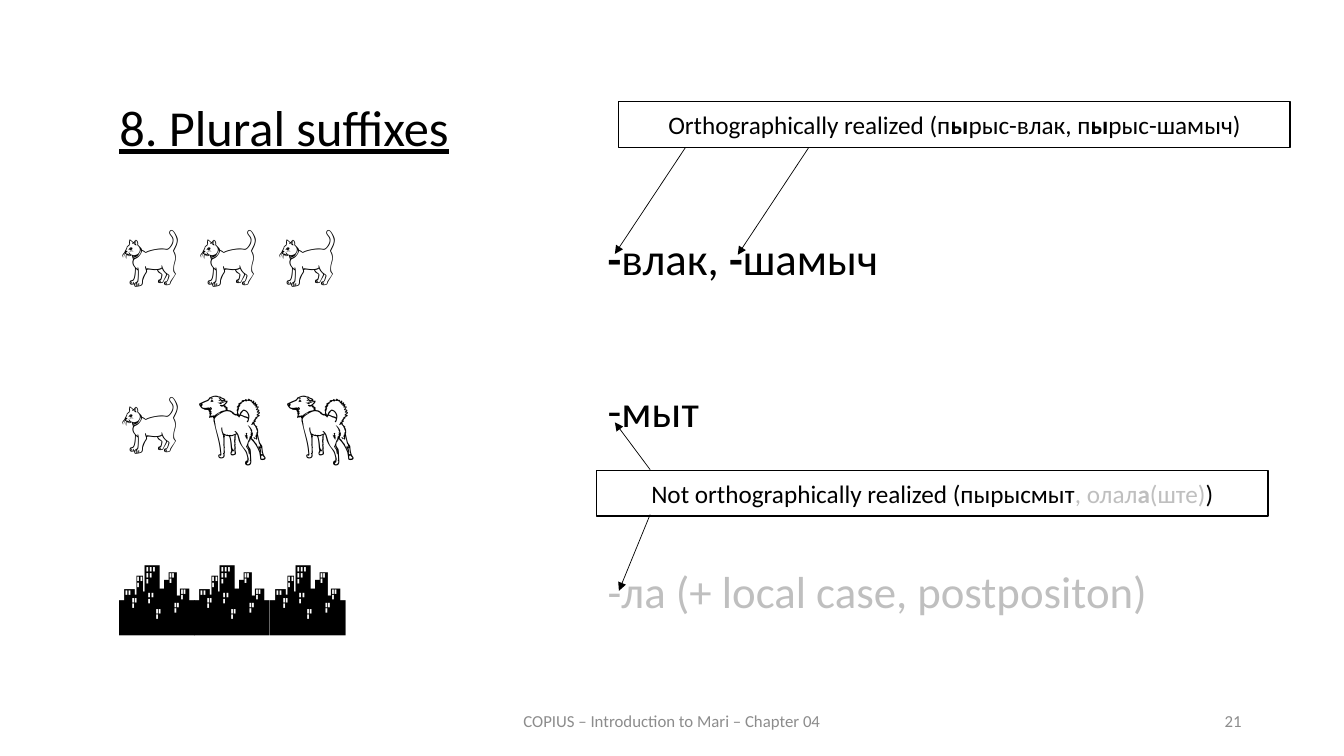
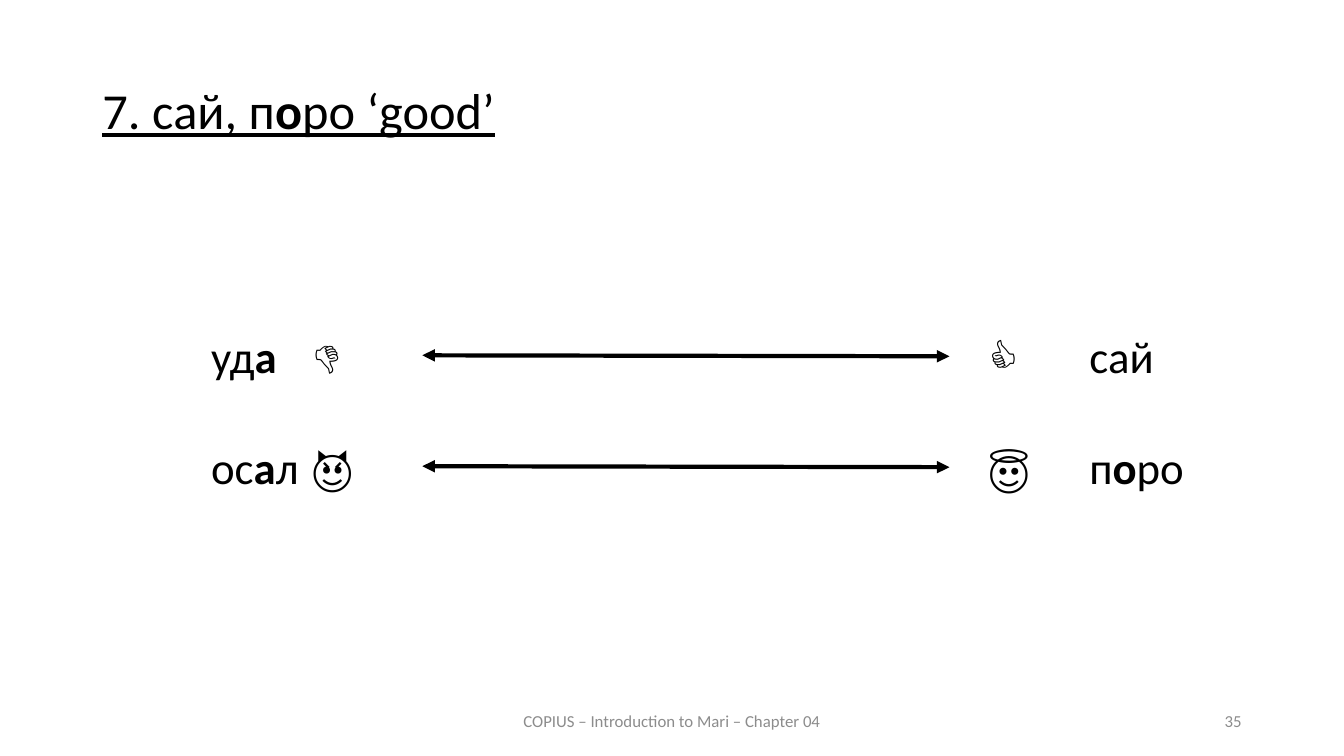
from typing import NamedTuple

from lxml import etree
from pptx import Presentation
from pptx.dml.color import RGBColor
from pptx.enum.shapes import MSO_CONNECTOR, MSO_SHAPE
from pptx.enum.text import MSO_ANCHOR, MSO_AUTO_SIZE, PP_ALIGN
from pptx.oxml.ns import qn
from pptx.shapes.base import BaseShape
from pptx.slide import Slide
from pptx.util import Pt

LEFT, CENTER, RIGHT = PP_ALIGN.LEFT, PP_ALIGN.CENTER, PP_ALIGN.RIGHT
TOP, MIDDLE = MSO_ANCHOR.TOP, MSO_ANCHOR.MIDDLE
FIXED, GROW = MSO_AUTO_SIZE.NONE, MSO_AUTO_SIZE.SHAPE_TO_FIT_TEXT
RECT, STRAIGHT = MSO_SHAPE.RECTANGLE, MSO_CONNECTOR.STRAIGHT

BLACK = RGBColor(0x00, 0x00, 0x00)
WHITE = RGBColor(0xFF, 0xFF, 0xFF)
PALE = RGBColor(0xBF, 0xBF, 0xBF)
GRAY = RGBColor(0x8C, 0x8C, 0x8C)
FACE = "Calibri"
FOOTER = "COPIUS – Introduction to Mari – Chapter 04"
TITLE_SIZE, ICON_SIZE, WORD_SIZE, NOTE_SIZE, FOOT_SIZE = 36, 54, 32, 18, 12
TAB = 72


class Box(NamedTuple):
    left: float
    top: float
    width: float
    height: float


class Bit(NamedTuple):
    text: str
    bold: bool = False
    color: RGBColor | None = None


class Label(NamedTuple):
    box: Box
    bits: list[Bit]
    size: float = WORD_SIZE
    color: RGBColor = BLACK


class Arrow(NamedTuple):
    start: tuple[float, float]
    end: tuple[float, float]
    width: float = 0.5
    double: bool = False


def mark(text: str) -> list[Bit]:
    """Split text at asterisks; every second piece is bold."""
    return [Bit(piece, i % 2 == 1)
            for i, piece in enumerate(text.split("*")) if piece]


def write(shape: BaseShape, bits: list[Bit], size: float,
          color: RGBColor = BLACK, align: PP_ALIGN = LEFT,
          anchor: MSO_ANCHOR = TOP, fit: MSO_AUTO_SIZE = FIXED) -> None:
    frame = shape.text_frame
    frame.word_wrap = True
    frame.auto_size = fit
    frame.vertical_anchor = anchor
    para = frame.paragraphs[0]
    para.alignment = align
    if any("\t" in bit.text for bit in bits):
        tabs = etree.SubElement(para._p.get_or_add_pPr(), qn("a:tabLst"))
        etree.SubElement(tabs, qn("a:tab"), pos=str(Pt(TAB)), algn="l")
    font = para.font
    font.name, font.size, font.color.rgb = FACE, Pt(size), color
    for bit in bits:
        run = para.add_run()
        run.text = bit.text
        if bit.bold:
            run.font.bold = True
        if bit.color is not None:
            run.font.color.rgb = bit.color


def add_text(slide: Slide, box: Box) -> BaseShape:
    return slide.shapes.add_textbox(*map(Pt, box))


def add_label(slide: Slide, label: Label) -> None:
    write(add_text(slide, label.box), label.bits, label.size,
          label.color, fit=GROW)


def add_note(slide: Slide, box: Box, bits: list[Bit]) -> None:
    note = slide.shapes.add_shape(RECT, *map(Pt, box))
    note.shadow.inherit = False
    note.fill.solid()
    note.fill.fore_color.rgb = WHITE
    note.line.color.rgb = BLACK
    note.line.width = Pt(1)
    write(note, bits, NOTE_SIZE, align=CENTER, anchor=MIDDLE)


def add_arrow(slide: Slide, arrow: Arrow) -> None:
    line = slide.shapes.add_connector(
        STRAIGHT, *map(Pt, arrow.start + arrow.end))
    line.line.color.rgb = BLACK
    line.line.width = Pt(arrow.width)
    props = line._element.spPr
    stroke = props.find(qn("a:ln"))
    if arrow.double:
        etree.SubElement(stroke, qn("a:headEnd"), type="triangle")
    etree.SubElement(stroke, qn("a:tailEnd"), type="triangle")
    etree.SubElement(props, qn("a:effectLst"))


def add_slide(deck: Presentation, title: str, left: float, top: float,
              number: int) -> Slide:
    """Add a slide with its title, footer and page number."""
    slide = deck.slides.add_slide(deck.slide_layouts[5])
    head = slide.shapes.title
    head.left, head.top, head.width, head.height = map(
        Pt, Box(left, top, 828, 104.4))
    write(head, mark(title), TITLE_SIZE, anchor=MIDDLE)
    para = head.text_frame.paragraphs[0]
    para.line_spacing = 0.9
    para.font.underline = True
    for box, text, align in (
            (Box(318, 500.4, 324, 28.8), FOOTER, CENTER),
            (Box(678, 500.4, 216, 28.8), str(number), RIGHT)):
        write(add_text(slide, box), mark(text), FOOT_SIZE, GRAY,
              align, MIDDLE)
    return slide


def draw_plural(deck: Presentation) -> None:
    slide = add_slide(deck, "8. Plural suffixes", 78, 41, 21)
    for i, icons in enumerate(("🐈 🐈 🐈", "🐈 🐕 🐕", "🏙️🏙️🏙️")):
        add_label(slide, Label(Box(78, 145.4 + 119.9 * i, 270, 72.7),
                               mark(icons), ICON_SIZE))
    for top, width, text, color in (
            (161.3, 215, "*-*влак, *-*шамыч", BLACK),
            (270, 215, "-мыт", BLACK),
            (398.9, 433, "-ла (+ local case, postpositon)", PALE)):
        add_label(slide, Label(Box(427, top, width, 46), mark(text),
                               color=color))
    add_note(slide, Box(442, 72.7, 479.5, 32.7), mark(
        "Orthographically realized (п*ы*рыс-влак, п*ы*рыс-шамыч)"))
    add_note(slide, Box(426.2, 336, 479.5, 32.7), [
        Bit("Not orthographically realized (пырысмыт"),
        Bit(", олал", color=PALE), Bit("а", True, PALE),
        Bit("(ште)", color=PALE), Bit(")")])
    for arrow in (Arrow((489.6, 105.4), (439.2, 181.4)),
                  Arrow((577.4, 105.8), (527, 182)),
                  Arrow((464.4, 367.5), (442.1, 422)),
                  Arrow((464.4, 335.5), (439.2, 301.7))):
        add_arrow(slide, arrow)


def draw_good(deck: Presentation) -> None:
    slide = add_slide(deck, "7. сай, п*о*ро ‘good’", 66, 29, 35)
    pairs = (("уд*а\t👎*", "👍\tсай"), ("ос*а*л\t😈", "😇\tп*о*ро"))
    for i, pair in enumerate(pairs):
        top = 231 + 79.2 * i
        for left, text in zip((143.7, 699), pair):
            add_label(slide, Label(Box(left, top, 157.5, 46), mark(text)))
        add_arrow(slide, Arrow((301.7, top + 22.8), (678.2, top + 23.5),
                               3, True))


def main() -> None:
    deck = Presentation()
    deck.slide_width, deck.slide_height = Pt(960), Pt(540)
    draw_plural(deck)
    draw_good(deck)
    deck.save("out.pptx")


if __name__ == "__main__":
    main()
